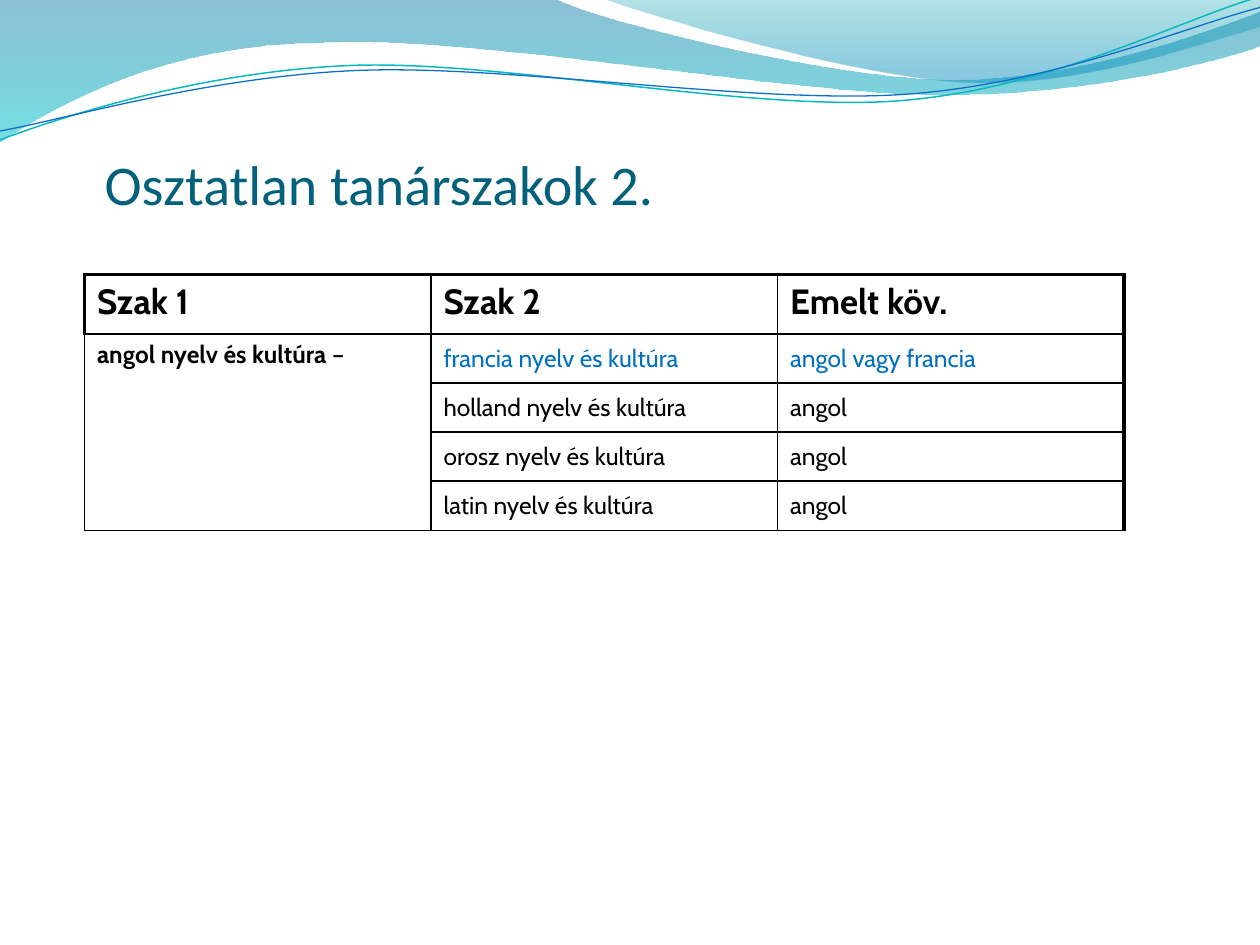
import math
from dataclasses import dataclass

from lxml import etree
from pptx import Presentation
from pptx.dml.color import RGBColor
from pptx.enum import text
from pptx.oxml import ns
from pptx.util import Inches, Pt


@dataclass(frozen=True)
class Theme:
    title: str = "04617B"
    ink: str = "000000"
    accent: str = "0070C0"
    teal_line: str = "0AB8BF"
    blue_line: str = "0F6FC6"
    title_font: str = "Calibri"
    body_font: str = "Cabin"
    title_size: float = 32
    head_size: float = 20
    body_size: float = 14
    thin: float = 1
    thick: float = 2.25


THEME = Theme()
TILT = -2.7

LEFT_WAVE = [
    [(-0.01, -0.01)],
    [(4.4, -0.01)],
    [(4.76, 0.17), (6.64, 0.63), (7.58, 0.63)],
    [(8.53, 0.63), (9.58, 0.26), (10, 0.09)],
    [(10.01, 0.36)],
    [(9.83, 0.44), (8.7, 0.76), (7.46, 0.75)],
    [(6.22, 0.75), (3.82, 0.28), (2.57, 0.34)],
    [(1.29, 0.35), (0.46, 0.83), (-0.01, 1.13)],
]
RIGHT_WAVE = [
    [(4.79, -0.01)],
    [(5.09, 0.11), (6.82, 0.62), (7.69, 0.65)],
    [(8.56, 0.69), (9.61, 0.32), (10, 0.21)],
    [(10, 0)],
]
TEAL_CURVE = [
    [(0, 1.11)],
    [(0.48, 0.93), (1.58, 0.57), (2.77, 0.52)],
    [(3.95, 0.47), (5.93, 0.89), (7.13, 0.8)],
    [(8.33, 0.71), (9.38, 0.15), (9.98, -0.02)],
]
BLUE_CURVE = [
    [(0, 1.04)],
    [(0.47, 0.96), (1.64, 0.61), (2.83, 0.56)],
    [(4.03, 0.51), (5.97, 0.83), (7.17, 0.75)],
    [(8.36, 0.67), (9.41, 0.21), (10, 0.06)],
]

HEADERS = ["Szak 1", "Szak 2", "Emelt köv."]
PAIRS = [
    ("francia nyelv és kultúra", "angol vagy francia", THEME.accent),
    ("holland nyelv és kultúra", "angol", THEME.ink),
    ("orosz nyelv és kultúra", "angol", THEME.ink),
    ("latin nyelv és kultúra", "angol", THEME.ink),
]


def add_text(p, words, size=THEME.body_size, color=THEME.ink,
             font=THEME.body_font, bold=False):
    r = p.add_run()
    r.text = words
    r.font.size = Pt(size)
    r.font.name = font
    r.font.bold = bold
    r.font.color.rgb = RGBColor.from_string(color)


def add_curve(s, segments, closed):
    dots = [(Inches(x), Inches(y)) for segment in segments for x, y in segment]
    builder = s.shapes.build_freeform(*dots[0])
    builder.add_line_segments(dots[1:], close=closed)
    sp = builder.convert_to_shape()
    sp.shadow.inherit = False
    steps = iter(list(sp._element.iter(ns.qn("a:lnTo"))))
    for segment in segments[1:]:
        first, *others = [next(steps) for _ in segment]
        if others:
            curve = etree.Element(ns.qn("a:cubicBezTo"))
            first.addprevious(curve)
            for step in (first, *others):
                curve.append(step[0])
                step.getparent().remove(step)
    return sp


def add_wave(s, segments, stops):
    sp = add_curve(s, segments, True)
    sp.line.fill.background()
    sp.fill.gradient()
    sp.fill.gradient_angle = 270
    for stop, (position, color, _) in zip(sp.fill.gradient_stops, stops):
        stop.position = position
        stop.color.rgb = RGBColor.from_string(color)
    colors = sp._element.spPr.iter(ns.qn("a:srgbClr"))
    for node, (_, _, opacity) in zip(colors, stops):
        etree.SubElement(node, ns.qn("a:alpha"), val=str(opacity * 1000))


def turn(point, center, degrees):
    angle = math.radians(degrees)
    dx, dy = point[0] - center[0], point[1] - center[1]
    return (center[0] + dx * math.cos(angle) - dy * math.sin(angle),
            center[1] + dx * math.sin(angle) + dy * math.cos(angle))


def add_tilted_line(s, segments, center, color, width):
    level = [[turn(point, center, -TILT) for point in segment]
             for segment in segments]
    sp = add_curve(s, level, False)
    sp.rotation = TILT
    sp.fill.background()
    sp.line.color.rgb = RGBColor.from_string(color)
    sp.line.width = Pt(width)


def set_borders(cell, **widths):
    tc_pr = cell._tc.get_or_add_tcPr()
    for i, side in enumerate("LRTB"):
        width = widths.get(side, THEME.thin)
        ln = etree.Element(ns.qn(f"a:ln{side}"), w=str(Pt(width)))
        fill = etree.SubElement(ln, ns.qn("a:solidFill"))
        etree.SubElement(fill, ns.qn("a:srgbClr"), val=THEME.ink)
        tc_pr.insert(i, ln)


def add_title(s, words):
    title = s.shapes.title
    title.left, title.top = Inches(0.83), Inches(1.15)
    title.width, title.height = Inches(8.25), Inches(0.57)
    tf = title.text_frame
    tf.auto_size = text.MSO_AUTO_SIZE.NONE
    tf.vertical_anchor = text.MSO_ANCHOR.BOTTOM
    tf.margin_left = tf.margin_right = tf.margin_bottom = 0
    tf.margin_top = Inches(0.05)
    p = tf.paragraphs[0]
    p.alignment = text.PP_ALIGN.LEFT
    add_text(p, words, size=THEME.title_size, color=THEME.title,
             font=THEME.title_font)


def add_subject_table(s):
    n_rows, n_cols = len(PAIRS) + 1, len(HEADERS)
    table = s.shapes.add_table(n_rows, n_cols, Inches(0.67), Inches(2.18),
                               Inches(8.25), Inches(2.03)).table
    table.first_row = table.horz_banding = False
    for i, row in enumerate(table.rows):
        row.height = Inches(0.39 if i else 0.47)
        for j, cell in enumerate(row.cells):
            cell.fill.background()
            widths = {}
            if i == 0:
                widths["T"] = THEME.thick
                if j == 0:
                    widths["L"] = THEME.thick
            if j == n_cols - 1:
                widths["R"] = THEME.thick
            set_borders(cell, **widths)

    for j, header in enumerate(HEADERS):
        add_text(table.cell(0, j).text_frame.paragraphs[0], header,
                 size=THEME.head_size, bold=True)
    for i, (subject, exam, color) in enumerate(PAIRS, start=1):
        for j, words in enumerate((subject, exam), start=1):
            cell = table.cell(i, j)
            cell.vertical_anchor = text.MSO_ANCHOR.MIDDLE
            add_text(cell.text_frame.paragraphs[0], words, color=color)

    table.cell(1, 0).merge(table.cell(n_rows - 1, 0))
    p = table.cell(1, 0).text_frame.paragraphs[0]
    add_text(p, "angol nyelv és kultúra", bold=True)
    add_text(p, " –")


def main():
    prs = Presentation()
    prs.slide_width, prs.slide_height = Inches(10), Inches(7.5)
    s = prs.slides.add_slide(prs.slide_layouts[5])
    add_wave(s, LEFT_WAVE, [(0, "0074A1", 45), (1, "00C6CF", 55)])
    add_wave(s, RIGHT_WAVE, [(0, "00A1A9", 30), (0.8, "008BBF", 45)])
    add_tilted_line(s, TEAL_CURVE, (4.99, 0.58), THEME.teal_line, 0.85)
    add_tilted_line(s, BLUE_CURVE, (5, 0.59), THEME.blue_line, 0.75)
    add_title(s, "Osztatlan tanárszakok 2.")
    add_subject_table(s)
    prs.save("out.pptx")


if __name__ == "__main__":
    main()
